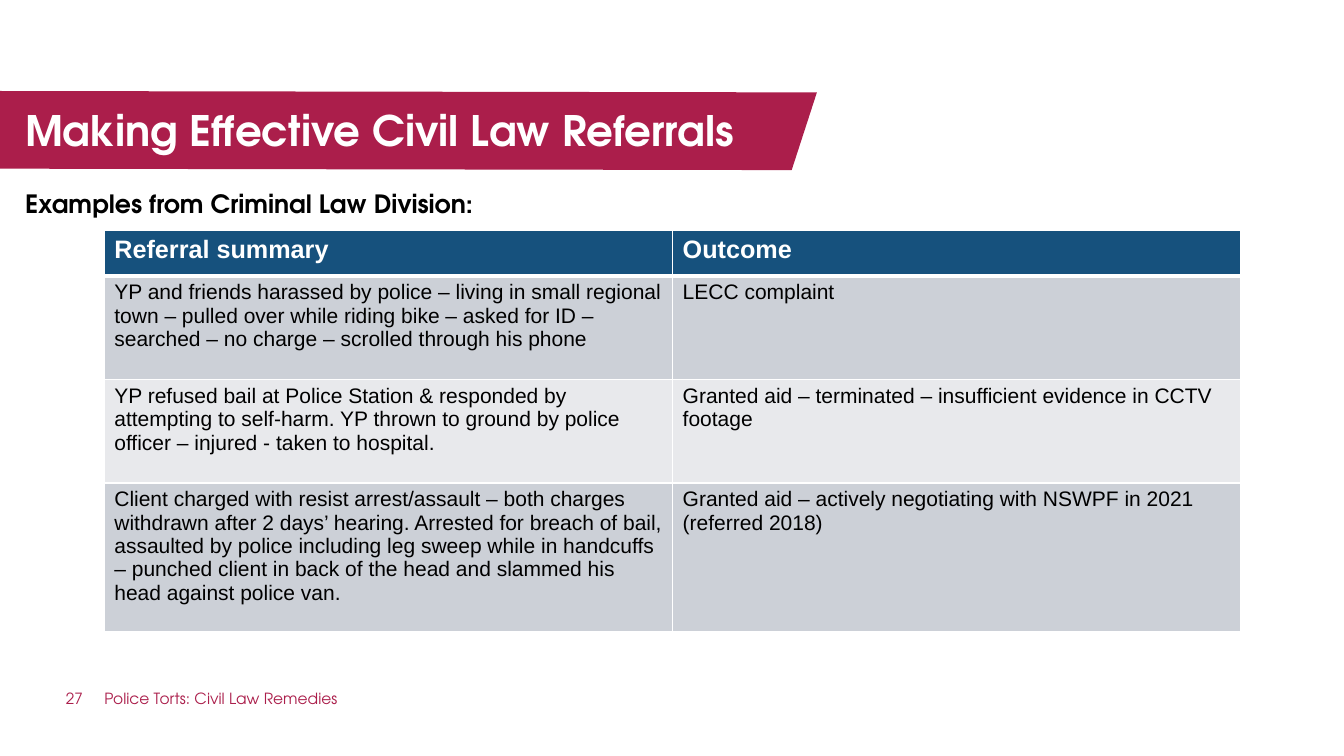
import pptx
import pptx.util
import pptx.dml.color
import pptx.enum.text
import pptx.oxml
import pptx.oxml.ns

Pt = pptx.util.Pt
RGB = pptx.dml.color.RGBColor
Anchor = pptx.enum.text.MSO_ANCHOR

RED = RGB(0xAB, 0x1E, 0x4B)
NAVY = RGB(0x16, 0x51, 0x7D)
GREY = RGB(0xCC, 0xD0, 0xD7)
PALE = RGB(0xE8, 0xE9, 0xEC)
WHITE = RGB(0xFF, 0xFF, 0xFF)
BLACK = RGB(0, 0, 0)

# Content: each cell is text, with a line break between paragraphs
ROWS = [
    ("Referral summary", "Outcome"),
    ("YP and friends harassed by police – living in small regional town – "
     "pulled over while riding bike – asked for ID – searched – no charge – "
     "scrolled through his phone",
     "LECC complaint"),
    ("YP refused bail at Police Station & responded by attempting to "
     "self-harm. YP thrown to ground by police officer – injured - taken to "
     "hospital.",
     "Granted aid – terminated – insufficient evidence in CCTV footage"),
    ("Client charged with resist arrest/assault – both charges withdrawn "
     "after 2 days’ hearing. Arrested for breach of bail, assaulted by police "
     "including leg sweep while in handcuffs – punched client in back of the "
     "head and slammed his head against police van.",
     "Granted aid – actively negotiating with NSWPF in 2021\n(referred 2018)"),
]
HEIGHTS = [32.5, 74, 74, 106.5]
BANNER = [(0, 65), (583.5, 66), (565.5, 121.5), (0, 120.5)]

# Formats
FACE = "TeX Gyre Adventor"
TITLE = {"name": FACE, "size": Pt(30), "bold": True, "color": WHITE}
LEAD = {"name": FACE, "size": Pt(18), "bold": True, "color": BLACK}
FOOT = {"name": FACE, "size": Pt(11), "bold": False, "color": RED}
HEAD = {"name": "Arial", "size": Pt(18), "bold": True, "color": WHITE}
CELL = {"name": "Arial", "size": Pt(15), "bold": False, "color": BLACK}

# Text, left, top, width, height, format, line spacing, anchor
LABELS = [
    ("Making Effective Civil Law Referrals", 18, 75, 543.5, 35.5, TITLE, 1,
     Anchor.MIDDLE),
    ("Examples from Criminal Law Division:", 18, 130.5, 782.5, 30, LEAD, 1.2,
     Anchor.TOP),
    ("27", 47, 492, 26.5, 25, FOOT, 1, Anchor.TOP),
    ("Police Torts: Civil Law Remedies", 74.5, 492, 442, 25, FOOT, 1,
     Anchor.TOP),
]


def style(font, form):
    for key, value in form.items():
        if key == "color":
            font.color.rgb = value
        else:
            setattr(font, key, value)


def add_label(slide, text, left, top, width, height, form, space, anchor):
    box = slide.shapes.add_textbox(Pt(left), Pt(top), Pt(width), Pt(height))
    frame = box.text_frame
    frame.word_wrap = True
    frame.vertical_anchor = anchor
    for side in ("left", "right", "top", "bottom"):
        setattr(frame, "margin_" + side, 0)
    para = frame.paragraphs[0]
    para.line_spacing = space
    run = para.add_run()
    run.text = text
    style(run.font, form)


def add_edges(cell, widths):
    props = cell._tc.get_or_add_tcPr()
    for side, width in widths.items():
        props.append(pptx.oxml.parse_xml(
            f'<a:ln{side} {pptx.oxml.ns.nsdecls("a")} w="{Pt(width)}">'
            f'<a:solidFill><a:srgbClr val="{WHITE}"/></a:solidFill>'
            f'</a:ln{side}>'))


def add_grid(slide):
    frame = slide.shapes.add_table(len(ROWS), 2, Pt(74.5), Pt(164.5),
                                   Pt(812), Pt(sum(HEIGHTS)))
    table = frame.table
    for i, (texts, height) in enumerate(zip(ROWS, HEIGHTS)):
        table.rows[i].height = Pt(height)
        fill = NAVY if i == 0 else (PALE, GREY)[i % 2]
        edges = {"L": 1, "R": 1, "T": 3 if i == 1 else 1,
                 "B": 3 if i == 0 else 1}
        for j, text in enumerate(texts):
            cell = table.cell(i, j)
            add_edges(cell, edges)
            cell.fill.solid()
            cell.fill.fore_color.rgb = fill
            cell.text = text
            for para in cell.text_frame.paragraphs:
                for run in para.runs:
                    style(run.font, CELL if i else HEAD)


def main():
    deck = pptx.Presentation()
    deck.slide_width, deck.slide_height = Pt(960), Pt(540)
    slide = deck.slides.add_slide(deck.slide_layouts[6])

    # Banner
    points = [(Pt(x), Pt(y)) for x, y in BANNER]
    path = slide.shapes.build_freeform(*points[0])
    path.add_line_segments(points[1:], close=True)
    banner = path.convert_to_shape()
    banner.shadow.inherit = False
    banner.fill.solid()
    banner.fill.fore_color.rgb = RED
    banner.line.fill.background()

    # Title, lead line and footer
    for label in LABELS:
        add_label(slide, *label)

    # Referral table
    add_grid(slide)
    deck.save("out.pptx")


if __name__ == "__main__":
    main()
